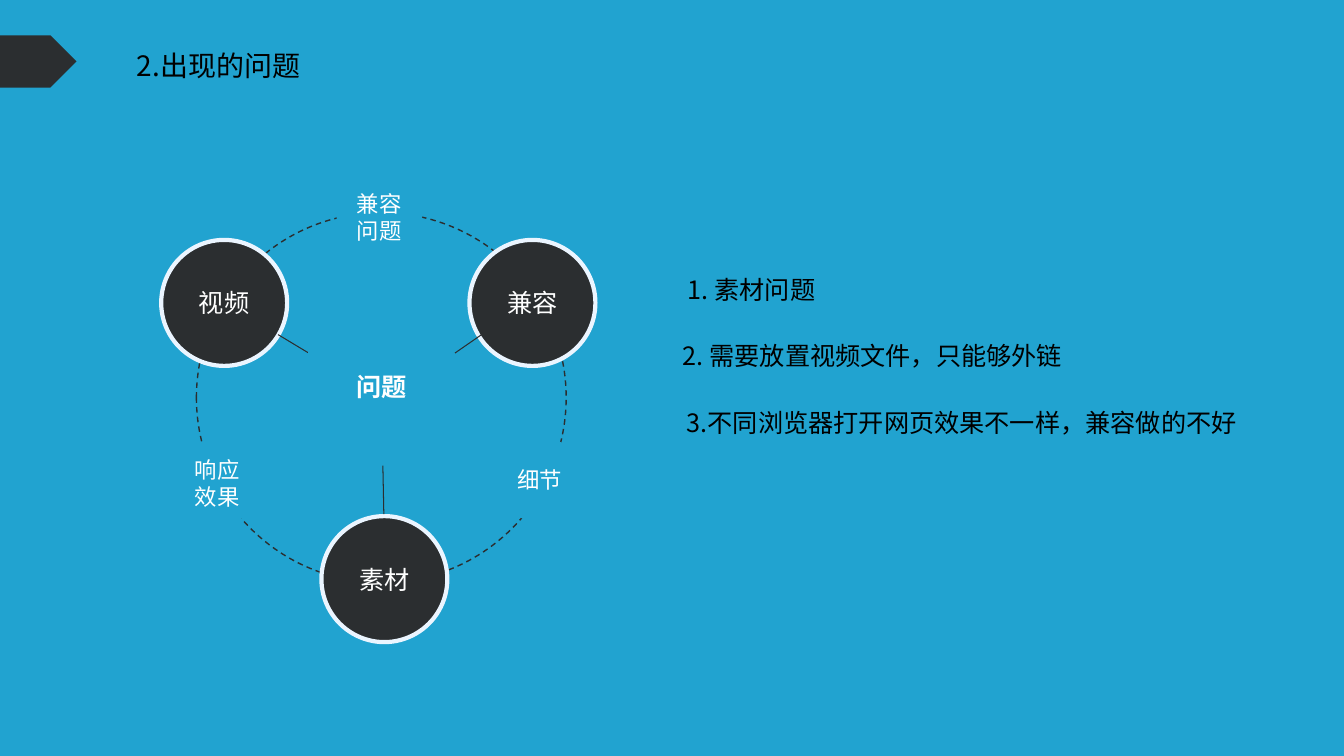
from lxml.etree import SubElement
from pptx import Presentation
from pptx.dml.color import RGBColor
from pptx.enum.dml import MSO_LINE
from pptx.enum.shapes import MSO_CONNECTOR, MSO_SHAPE
from pptx.enum.text import MSO_ANCHOR, MSO_AUTO_SIZE, PP_ALIGN
from pptx.oxml.ns import qn
from pptx.util import Pt

PX = 9144  # 100 px to the inch
CJK = "Noto Sans CJK SC"
BLUE, DARK, PALE, WHITE, BLACK = "21A3D0", "2B2E30", "EBF5FF", "FFFFFF", "000000"


def px(*lengths):
    return [n * PX for n in lengths]


def rgb(color):
    return RGBColor.from_string(color)


def write(s, lines, size, color, align=PP_ALIGN.CENTER, wrap=True, font=CJK, bold=False):
    tf = s.text_frame
    tf.word_wrap = wrap
    for i, line in enumerate(lines):
        p = tf.paragraphs[0] if i == 0 else tf.add_paragraph()
        p.alignment = align
        r = p.add_run()
        r.text = line
        r.font.size = Pt(size)
        r.font.name = font
        r.font.bold = bold
        r.font.color.rgb = rgb(color)
        SubElement(r.font._element, qn("a:ea"), typeface=CJK)


def add_shape(slide, kind, box, fill=None, line=None, width=1):
    s = slide.shapes.add_shape(kind, *px(*box))
    s.shadow.inherit = False
    if fill:
        s.fill.solid()
        s.fill.fore_color.rgb = rgb(fill)
    else:
        s.fill.background()
    if line:
        s.line.color.rgb = rgb(line)
        s.line.width = Pt(width)
    else:
        s.line.fill.background()
    s.text_frame.vertical_anchor = MSO_ANCHOR.MIDDLE
    return s


def add_text(slide, box, text, size, align):
    s = slide.shapes.add_textbox(*px(*box))
    write(s, [text], size, BLACK, align)
    s.text_frame.auto_size = MSO_AUTO_SIZE.SHAPE_TO_FIT_TEXT


def add_spoke(slide, x1, y1, x2, y2):
    c = slide.shapes.add_connector(MSO_CONNECTOR.STRAIGHT, *px(x1, y1, x2, y2))
    c.line.color.rgb = rgb(DARK)
    c.line.width = Pt(0.75)
    SubElement(c._element.spPr, qn("a:effectLst"))


def add_cycle(slide, x, y):
    """Dashed ring with three nodes, three labels on the ring and a hub."""
    ring = add_shape(slide, MSO_SHAPE.OVAL, (x + 35, y + 38, 367, 367), line=DARK)
    ring.line.dash_style = MSO_LINE.DASH

    for text, dx, dy in (("视频", 0, 65), ("兼容", 306, 65), ("素材", 159, 339)):
        s = add_shape(slide, MSO_SHAPE.OVAL, (x + dx, y + dy, 125, 125), DARK, PALE, 3)
        write(s, [text], 18, WHITE)

    labels = ((["兼容", "问题"], 174, 0), (["细节"], 333, 260), (["响应", "效果"], 13, 264))
    for lines, dx, dy in labels:
        s = add_shape(slide, MSO_SHAPE.OVAL, (x + dx, y + dy, 85, 85), BLUE)
        write(s, lines, 16, WHITE, wrap=False)

    for x1, y1, x2, y2 in ((221, 337, 220, 288), (318, 159, 279, 186), (116, 159, 161, 186)):
        add_spoke(slide, x + x1, y + y1, x + x2, y + y2)

    hub = add_shape(slide, MSO_SHAPE.OVAL, (x + 138, y + 132, 161, 157), BLUE)
    write(hub, ["问题"], 18, WHITE, wrap=False, font="Arial Narrow", bold=True)


def add_header(slide, x, y):
    add_text(slide, (x + 126, y + 8, 184, 44), "2.出现的问题", 20, PP_ALIGN.LEFT)
    add_shape(slide, MSO_SHAPE.PENTAGON, (x, y, 76, 52), DARK)
    add_shape(slide, MSO_SHAPE.CHEVRON, (x + 62, y, 47, 52), BLUE)


def add_problems(slide, x, y):
    problems = (
        ("1. 素材问题", -221, 604),
        ("2. 需要放置视频文件，只能够外链", 0, 402),
        ("3.不同浏览器打开网页效果不一样，兼容做的不好", 0, 579),
    )
    for i, (text, dx, w) in enumerate(problems):
        add_text(slide, (x + dx, y + 66 * i, w, 40), text, 18, PP_ALIGN.CENTER)


def main():
    prs = Presentation()
    prs.slide_width, prs.slide_height = px(1334, 750)
    slide = prs.slides.add_slide(prs.slide_layouts[6])
    slide.background.fill.solid()
    slide.background.fill.fore_color.rgb = rgb(BLUE)
    add_cycle(slide, 160, 173)
    add_header(slide, 0, 35)
    add_problems(slide, 665, 267)
    prs.save("out.pptx")


if __name__ == "__main__":
    main()
